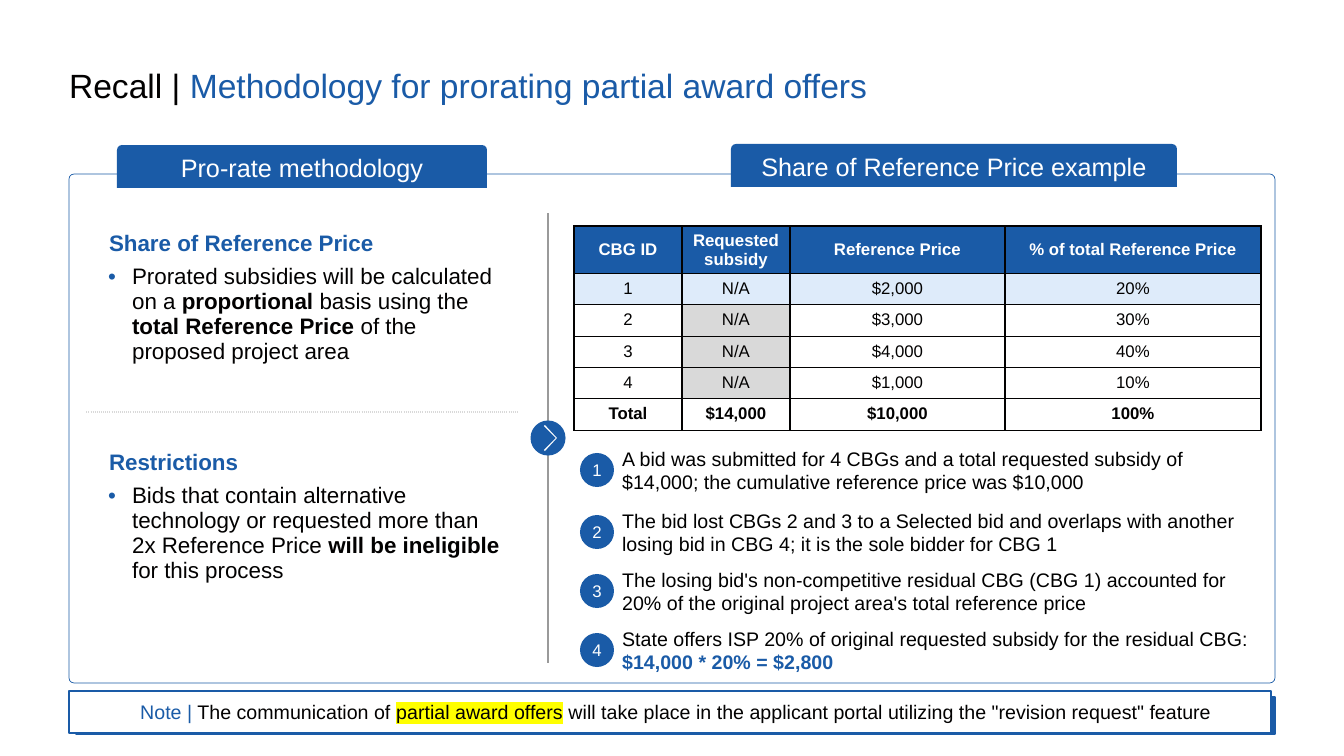
import lxml.etree
import pptx
import pptx.dml.color
import pptx.enum.shapes
import pptx.enum.text
import pptx.oxml.ns
import pptx.util

PX = 9071  # EMU per px, 100.8 px to the inch
BLUE, INK, WHITE, GREY = "1A5BA7", "020101", "FFFFFF", "D9D9D9"
rgb = pptx.dml.color.RGBColor.from_string
qn = pptx.oxml.ns.qn
sub = lxml.etree.SubElement
KIND = pptx.enum.shapes.MSO_SHAPE
CENTER = pptx.enum.text.PP_ALIGN.CENTER
MIDDLE = pptx.enum.text.MSO_ANCHOR.MIDDLE

prs = pptx.Presentation()
prs.slide_width, prs.slide_height = 1344 * PX, 756 * PX
s = prs.slides.add_slide(prs.slide_layouts[5])


def add_shape(kind, x, y, w, h, fill=None, line=None, width=0.75):
    sp = s.shapes.add_shape(kind, x * PX, y * PX, w * PX, h * PX)
    sp.shadow.inherit = False
    if fill:
        sp.fill.solid()
        sp.fill.fore_color.rgb = rgb(fill)
    else:
        sp.fill.background()
    if line:
        sp.line.color.rgb = rgb(line)
        sp.line.width = pptx.util.Pt(width)
    else:
        sp.line.fill.background()
    sp.text_frame.vertical_anchor = MIDDLE
    return sp


def add_runs(p, size, *runs):
    """Each run is (text, colour, bold, highlight); the last two are optional."""
    for text, colour, *style in runs:
        r = p.add_run()
        r.text = text
        r.font.size = pptx.util.Pt(size)
        r.font.bold = bool(style and style[0])
        r.font.color.rgb = rgb(colour)
        if len(style) > 1:
            highlight = sub(r._r.get_or_add_rPr(), qn("a:highlight"))
            sub(highlight, qn("a:srgbClr"), val=style[1])
        r.font.name = "Arial"


# Title
title = s.shapes.title
title.left, title.top, title.width, title.height = 69 * PX, 69 * PX, 1206 * PX, 36 * PX
tf = title.text_frame
tf.auto_size = pptx.enum.text.MSO_AUTO_SIZE.NONE
tf.vertical_anchor = pptx.enum.text.MSO_ANCHOR.TOP
tf.margin_left = tf.margin_right = tf.margin_top = tf.margin_bottom = 0
p = tf.paragraphs[0]
p.alignment = pptx.enum.text.PP_ALIGN.LEFT
p.line_spacing = 0.9
add_runs(p, 24, ("Recall | ", INK), ("Methodology for prorating partial award offers", BLUE))

# Divider with arrow marker
divider = s.shapes.add_connector(
    pptx.enum.shapes.MSO_CONNECTOR.STRAIGHT, 548 * PX, 213 * PX, 548 * PX, 663 * PX)
divider.line.color.rgb = rgb("9A9A9A")
divider.line.width = pptx.util.Pt(0.75)
sub(divider._element.spPr, qn("a:effectLst"))
add_shape(KIND.OVAL, 531, 421, 34, 34, BLUE, BLUE)
builder = s.shapes.build_freeform(545, 451, scale=PX)
builder.add_line_segments([(544, 450), (556, 438), (544, 426), (545, 425), (557, 438)])
chevron = builder.convert_to_shape()
chevron.shadow.inherit = False
chevron.fill.solid()
chevron.fill.fore_color.rgb = rgb(WHITE)
chevron.line.fill.background()

# Frame and its two tabs
frame = add_shape(KIND.ROUNDED_RECTANGLE, 69, 174, 1206, 509, None, BLUE, 0.5)
frame.adjustments[0] = 0.01
for x, y, w, text in [(117, 145, 370, "Pro-rate methodology"),
                      (731, 144, 446, "Share of Reference Price example")]:
    tab = add_shape(KIND.ROUND_2_SAME_RECTANGLE, x, y, w, 43, BLUE)
    tab.adjustments[0] = 0.117
    p = tab.text_frame.paragraphs[0]
    p.alignment = CENTER
    add_runs(p, 18, (text, WHITE))

# Price table
rows = [
    ["CBG ID", "Requested subsidy", "Reference Price", "% of total Reference Price"],
    ["1", "N/A", "$2,000", "20%"],
    ["2", "N/A", "$3,000", "30%"],
    ["3", "N/A", "$4,000", "40%"],
    ["4", "N/A", "$1,000", "10%"],
    ["Total", "$14,000", "$10,000", "100%"],
]
prices = s.shapes.add_table(6, 4, 574 * PX, 226 * PX, 687 * PX, 204 * PX).table
for column, w in zip(prices.columns, [108, 108, 215, 256]):
    column.width = w * PX
for row, h in zip(prices.rows, [47, 31, 32, 31, 31, 32]):
    row.height = h * PX
for i, values in enumerate(rows):
    for j, value in enumerate(values):
        cell = prices.cell(i, j)
        if i == 0:
            fill = BLUE
            cell.vertical_anchor = MIDDLE
        elif i == 1:
            fill = "DEEBFA"
        else:
            fill = GREY if j == 1 and i < 5 else WHITE
        cell.fill.solid()
        cell.fill.fore_color.rgb = rgb(fill)
        p = cell.text_frame.paragraphs[0]
        p.alignment = CENTER
        add_runs(p, 12, (value, WHITE if i == 0 else INK, i in (0, 5)))

# Methodology table
sections = [
    (186, 5, "Share of Reference Price", [
        ("Prorated subsidies will be calculated on a ", INK), ("proportional", INK, True),
        (" basis using the ", INK), ("total Reference Price ", INK, True),
        ("of the proposed project area", INK)]),
    (255, 38, "Restrictions", [
        ("Bids that contain alternative technology or requested more than 2x Reference Price ", INK),
        ("will be ineligible", INK, True), (" for this process", INK)]),
]
method = s.shapes.add_table(2, 1, 87 * PX, 226 * PX, 430 * PX, 441 * PX).table
for i, (h, margin, heading, runs) in enumerate(sections):
    method.rows[i].height = h * PX
    cell = method.cell(i, 0)
    cell.fill.background()
    cell.margin_top = margin * PX
    p = cell.text_frame.paragraphs[0]
    p._p.get_or_add_pPr().set("marL", str(12 * PX))
    p.space_after = pptx.util.Pt(6)
    add_runs(p, 16, (heading, BLUE, True))
    p = cell.text_frame.add_paragraph()
    pPr = p._p.get_or_add_pPr()
    pPr.set("marL", str(35 * PX))
    pPr.set("indent", str(-24 * PX))
    sub(sub(pPr, qn("a:buClr")), qn("a:srgbClr"), val=BLUE)
    sub(pPr, qn("a:buFont"), typeface="Arial")
    sub(pPr, qn("a:buChar"), char="•")
    add_runs(p, 16, *runs)

# Cell borders
borders = [(cell, edge, INK, "solid") for cell in prices.iter_cells() for edge in "LRTB"]
borders += [(method.cell(0, 0), "B", GREY, "sysDot"), (method.cell(1, 0), "T", GREY, "sysDot")]
for table in (prices, method):
    table.first_row = table.horz_banding = False
for cell, edge, colour, dash in borders:
    tcPr = cell._tc.get_or_add_tcPr()
    ln = lxml.etree.Element(qn("a:ln" + edge), w="12700")
    sub(sub(ln, qn("a:solidFill")), qn("a:srgbClr"), val=colour)
    sub(ln, qn("a:prstDash"), val=dash)
    tcPr.insert(len(tcPr.findall("*")) - 1, ln)

# Numbered steps
steps = [
    (447, [("A bid was submitted for 4 CBGs and a total requested subsidy of $14,000; "
            "the cumulative reference price was $10,000", "000000")]),
    (509, [("The bid lost CBGs 2 and 3 to a Selected bid and overlaps with another "
            "losing bid in CBG 4; it is the sole bidder for CBG 1", "000000")]),
    (568, [("The losing bid's non-competitive residual CBG (CBG 1) accounted for "
            "20% of the original project area's total reference price", "000000")]),
    (627, [("State offers ISP 20% of original requested subsidy for the residual CBG: ", "000000"),
           ("$14,000 * 20% = $2,800", BLUE, True)]),
]
for number, (y, runs) in enumerate(steps, 1):
    step = add_shape(KIND.ROUNDED_RECTANGLE, 610, y, 651, 46, None, WHITE, 1.5)
    p = step.text_frame.paragraphs[0]
    p.alignment = pptx.enum.text.PP_ALIGN.LEFT
    add_runs(p, 14, *runs)
    badge = add_shape(KIND.OVAL, 580, y + 6, 34, 34, BLUE)
    tf = badge.text_frame
    tf.margin_left = tf.margin_right = tf.margin_top = tf.margin_bottom = 0
    tf.paragraphs[0].alignment = CENTER
    add_runs(tf.paragraphs[0], 12, (str(number), WHITE))

# Note
add_shape(KIND.RECTANGLE, 76, 697, 1199, 37, BLUE, BLUE, 1.5)
note = add_shape(KIND.RECTANGLE, 69, 691, 1202, 42, WHITE, BLUE, 1.5)
p = note.text_frame.paragraphs[0]
p.alignment = CENTER
p._p.get_or_add_pPr().set("marL", str(12 * PX))
add_runs(p, 14, ("Note |", BLUE), (" The communication of ", INK),
         ("partial award offers", INK, False, "FFFF00"),
         (' will take place in the applicant portal utilizing the "revision request" feature', INK))

prs.save("out.pptx")
